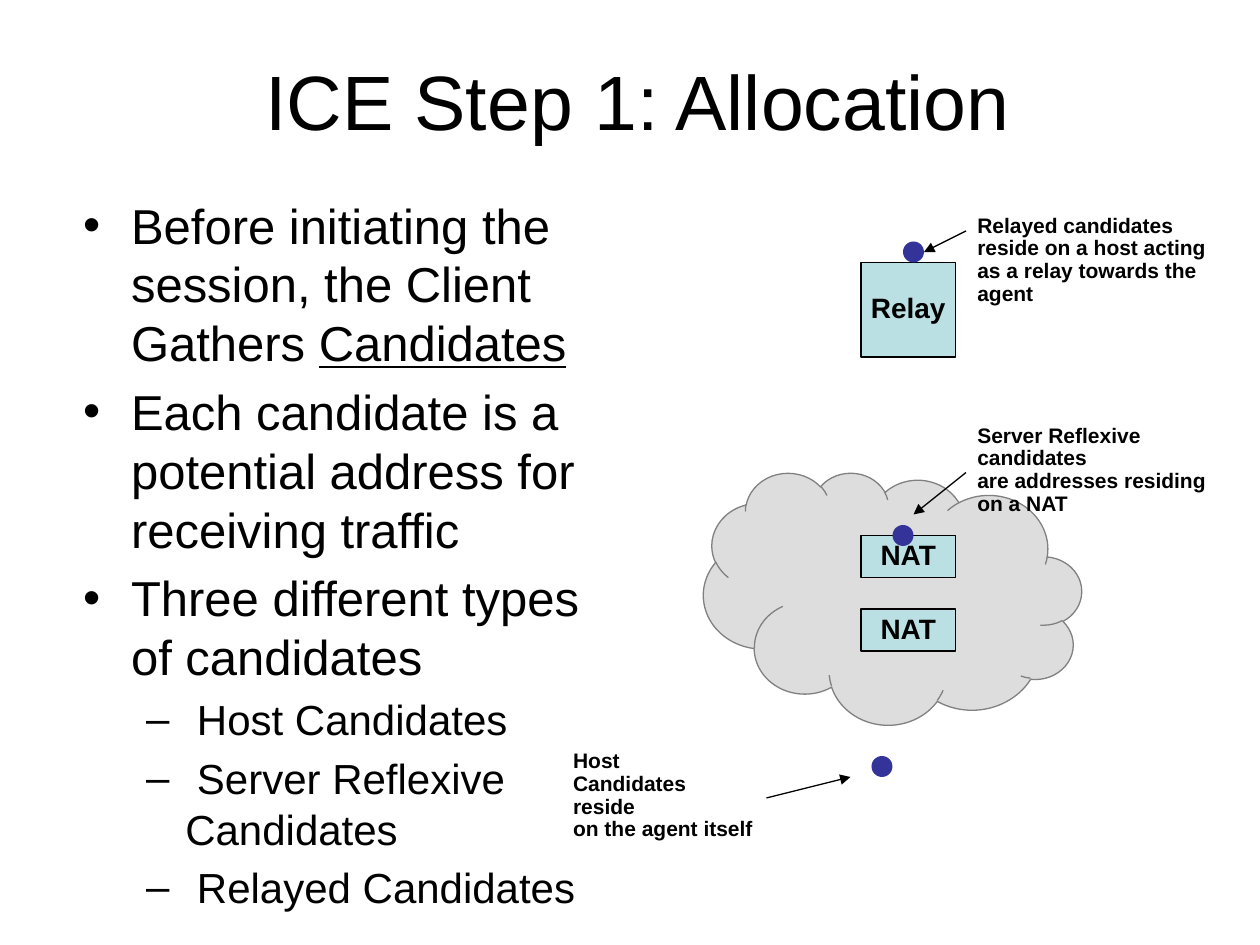
from copy import deepcopy

from lxml.etree import SubElement
from pptx import Presentation
from pptx.dml.color import RGBColor
from pptx.enum.shapes import MSO_CONNECTOR as CONN, MSO_SHAPE as SHAPE
from pptx.enum.text import MSO_ANCHOR as ANCHOR, PP_ALIGN as ALIGN
from pptx.oxml.ns import qn
from pptx.util import Inches, Pt

COLORS = {
    "text": "000000",
    "line": "000000",
    "box": "BBE0E3",
    "cloud": "DDDDDD",
    "cloud_line": "808080",
    "dot": "333399",
}
COLS, ROWS = 120, 90  # grid of twelfths of an inch
NOTE = {"size": Pt(12), "bold": True}
LABEL = {"size": Pt(16), "bold": True}
INSETS = {"margin_left": 0.09, "margin_right": 0.09,
          "margin_top": 0.04, "margin_bottom": 0.04}


def grid(*cells):
    return [Inches(c / 12) for c in cells]


def rgb(name):
    return RGBColor.from_string(COLORS[name])


def style_runs(p, fmt):
    for r in p.runs:
        r.font.name = "Arial"
        r.font.color.rgb = rgb("text")
        for key, value in fmt.items():
            setattr(r.font, key, value)
    # Line breaks take the size of the text around them
    for br in p._p.findall(qn("a:br")):
        br.append(deepcopy(p.runs[0]._r.rPr))


def fill_text(tf, lines, fmt, **para):
    """Write one paragraph per line; a newline in it is a line break."""
    for i, line in enumerate(lines):
        p = tf.add_paragraph() if i else tf.paragraphs[0]
        p.text = line
        for key, value in para.items():
            setattr(p, key, value)
        style_runs(p, fmt)


def set_insets(tf):
    for side, inches in INSETS.items():
        setattr(tf, side, Inches(inches))


def add_text(slide, cells):
    tf = slide.shapes.add_textbox(*grid(*cells)).text_frame
    tf.word_wrap = True
    return tf


def add_title(slide, text):
    tf = add_text(slide, (6.75, 6, 108, 7))
    tf.vertical_anchor = ANCHOR.MIDDLE
    fill_text(tf, [text], {"size": Pt(44)}, alignment=ALIGN.CENTER)


def add_bullets(slide, items):
    """Items are (level, plain text, underlined text)."""
    levels = [("•", 28, 0.38, 0.38), ("–", 24, 0.81, 0.31)]
    tf = add_text(slide, (6.75, 18, 53, 66))
    for i, (level, text, underlined) in enumerate(items):
        char, size, left, hang = levels[level]
        p = tf.add_paragraph() if i else tf.paragraphs[0]
        p.level = level
        p.space_before = Pt(size * 0.2)
        p.add_run().text = text
        if underlined:
            r = p.add_run()
            r.text = underlined
            r.font.underline = True
        style_runs(p, {"size": Pt(size)})
        pPr = p._p.get_or_add_pPr()
        pPr.set("marL", str(Inches(left)))
        pPr.set("indent", str(-Inches(hang)))
        SubElement(pPr, qn("a:buFont")).set("typeface", "Arial")
        SubElement(pPr, qn("a:buChar")).set("char", char)


def add_note(slide, cells, lines):
    tf = add_text(slide, cells)
    set_insets(tf)
    fill_text(tf, lines, NOTE, line_spacing=0.9)


def add_shape(slide, kind, cells, fill, line=None):
    sp = slide.shapes.add_shape(kind, *grid(*cells))
    sp.shadow.inherit = False
    sp.fill.solid()
    sp.fill.fore_color.rgb = rgb(fill)
    if line:
        sp.line.color.rgb = rgb(line)
        sp.line.width = Pt(0.75)
    else:
        sp.line.fill.background()
    return sp


def add_box(slide, row, height, label):
    tf = add_shape(slide, SHAPE.RECTANGLE, (82, row, 9, height), "box", "line").text_frame
    tf.word_wrap = False
    tf.vertical_anchor = ANCHOR.MIDDLE
    set_insets(tf)
    fill_text(tf, [label], LABEL, alignment=ALIGN.CENTER, line_spacing=0.9)


def add_arrow(slide, cells):
    cx = slide.shapes.add_connector(CONN.STRAIGHT, *grid(*cells))
    cx.line.color.rgb = rgb("line")
    cx.line.width = Pt(0.75)
    SubElement(cx.line._get_or_add_ln(), qn("a:tailEnd")).set("type", "triangle")
    SubElement(cx._element.spPr, qn("a:effectLst"))


def main():
    prs = Presentation()
    prs.slide_width, prs.slide_height = grid(COLS, ROWS)
    slide = prs.slides.add_slide(prs.slide_layouts[6])

    # Title and bullets
    add_title(slide, "ICE Step 1: Allocation")
    add_bullets(slide, [
        (0, "Before initiating the session, the Client Gathers ", "Candidates"),
        (0, "Each candidate is a potential address for receiving traffic", ""),
        (0, "Three different types of candidates", ""),
        (1, " Host Candidates", ""),
        (1, " Server Reflexive Candidates", ""),
        (1, " Relayed Candidates", ""),
    ])

    # Network cloud, mirrored, with the relay above and the NATs inside
    cloud = add_shape(slide, SHAPE.CLOUD, (67, 45, 36, 24), "cloud", "cloud_line")
    cloud._element.spPr.xfrm.set("flipH", "1")
    for row, height, label in [(25, 9, "Relay"), (51, 4, "NAT"), (58, 4, "NAT")]:
        add_box(slide, row, height, label)

    # Each candidate: a dot, its note and an arrow from note to dot
    candidates = [
        ((83, 72), (53.5, 71, 19.3, 7.6), (73, 76, 81, 74),
         ["Host", "Candidates reside\non the agent itself"]),
        ((85, 50), (92, 40, 25, 9.75), (92, 45, 87, 49),
         ["Server Reflexive candidates", "are addresses residing on a NAT"]),
        ((86, 23), (92, 20, 25, 9.75), (92, 22, 88, 24),
         ["Relayed candidates reside on a host acting\nas a relay towards the\nagent"]),
    ]
    for dot, note, arrow, lines in candidates:
        add_shape(slide, SHAPE.OVAL, (*dot, 2, 2), "dot")
        add_note(slide, note, lines)
        add_arrow(slide, arrow)

    prs.save("out.pptx")


if __name__ == "__main__":
    main()
